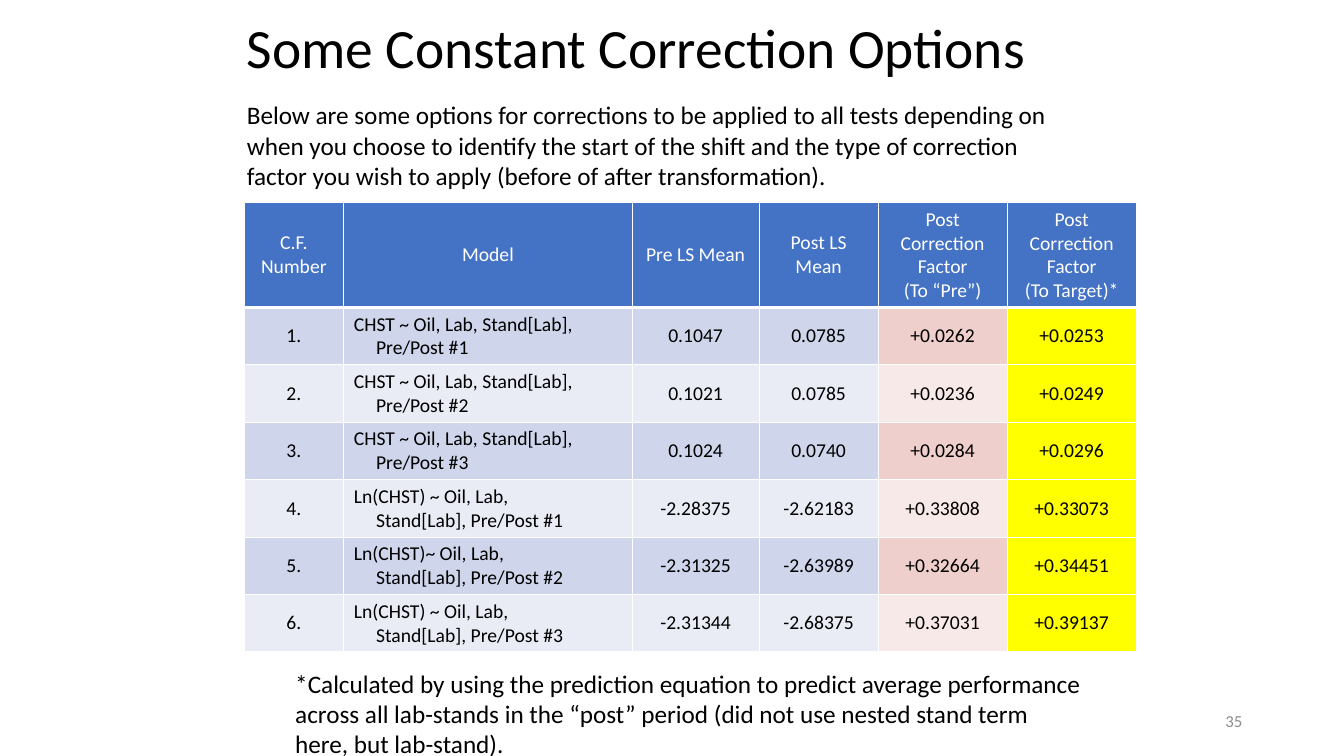
import lxml.etree
import pptx
import pptx.dml.color
import pptx.enum.text
import pptx.oxml.ns
import pptx.util

Inches = pptx.util.Inches
Align = pptx.enum.text.PP_ALIGN
Anchor = pptx.enum.text.MSO_ANCHOR

COLUMN_WIDTHS = [0.99, 2.86, 1.26, 1.18, 1.28, 1.28]
HEADER_HEIGHT = 1.04
ROW_HEIGHT = 0.57
MODEL_COLUMN = 1
WRAP_INDENT = 0.22

HEADERS = [
    "C.F. Number",
    "Model",
    "Pre LS Mean",
    "Post LS Mean",
    "Post Correction Factor\n(To “Pre”)",
    "Post Correction Factor\n(To Target)*",
]
CORRECTIONS = [
    ["1.", "CHST ~ Oil, Lab, Stand[Lab],\nPre/Post #1", "0.1047", "0.0785", "+0.0262", "+0.0253"],
    ["2.", "CHST ~ Oil, Lab, Stand[Lab],\nPre/Post #2", "0.1021", "0.0785", "+0.0236", "+0.0249"],
    ["3.", "CHST ~ Oil, Lab, Stand[Lab],\nPre/Post #3", "0.1024", "0.0740", "+0.0284", "+0.0296"],
    ["4.", "Ln(CHST) ~ Oil, Lab,\nStand[Lab], Pre/Post #1", "-2.28375", "-2.62183", "+0.33808", "+0.33073"],
    ["5.", "Ln(CHST)~ Oil, Lab,\nStand[Lab], Pre/Post #2", "-2.31325", "-2.63989", "+0.32664", "+0.34451"],
    ["6.", "Ln(CHST) ~ Oil, Lab,\nStand[Lab], Pre/Post #3", "-2.31344", "-2.68375", "+0.37031", "+0.39137"],
]
HEADER_FILLS = ["4472C4"] * 6
BAND_FILLS = [
    ["CFD5EA"] * 4 + ["EFCFCC", "FFFF00"],
    ["E9EBF5"] * 4 + ["F7E9E7", "FFFF00"],
]


def color(hex_string):
    return pptx.dml.color.RGBColor.from_string(hex_string)


def format_text(frame, size, hex_string, align):
    for para in frame.paragraphs:
        para.alignment = align
        for span in para.runs:
            span.font.name = "Calibri"
            span.font.size = pptx.util.Pt(size)
            span.font.bold = False
            span.font.color.rgb = color(hex_string)


def add_text(page, box, text, size, hex_string="000000", align=Align.LEFT, anchor=Anchor.TOP):
    frame = page.shapes.add_textbox(*map(Inches, box)).text_frame
    frame.word_wrap = True
    frame.vertical_anchor = anchor
    frame.text = text
    format_text(frame, size, hex_string, align)
    return frame


def add_title(page, box, text):
    frame = add_text(page, box, text, 39.6, anchor=Anchor.MIDDLE)
    frame.paragraphs[0].line_spacing = 0.9


def set_borders(cell, hex_string, bottom_width):
    properties = cell._tc.get_or_add_tcPr()
    for side, width in (("L", 1), ("R", 1), ("T", 1), ("B", bottom_width)):
        line = lxml.etree.SubElement(properties, pptx.oxml.ns.qn("a:ln" + side))
        line.set("w", str(pptx.util.Pt(width)))
        fill = lxml.etree.SubElement(line, pptx.oxml.ns.qn("a:solidFill"))
        lxml.etree.SubElement(fill, pptx.oxml.ns.qn("a:srgbClr")).set("val", hex_string)


def fill_row(table, row_index, texts, fills, hex_string, bottom_width):
    for column_index, (text, fill) in enumerate(zip(texts, fills)):
        cell = table.cell(row_index, column_index)
        set_borders(cell, "FFFFFF", bottom_width)
        cell.fill.solid()
        cell.fill.fore_color.rgb = color(fill)
        cell.vertical_anchor = Anchor.MIDDLE
        cell.text_frame.text = text
        is_model = row_index > 0 and column_index == MODEL_COLUMN
        format_text(cell.text_frame, 14, hex_string, Align.LEFT if is_model else Align.CENTER)
        if is_model:
            wrapped = cell.text_frame.paragraphs[1]
            wrapped._p.get_or_add_pPr().set("marL", str(Inches(WRAP_INDENT)))


def add_correction_table(page, left, top):
    heights = [HEADER_HEIGHT] + [ROW_HEIGHT] * len(CORRECTIONS)
    box = (left, top, sum(COLUMN_WIDTHS), sum(heights))
    table = page.shapes.add_table(len(heights), len(COLUMN_WIDTHS), *map(Inches, box)).table
    table.first_row = True
    table.horz_banding = False
    for column, width in zip(table.columns, COLUMN_WIDTHS):
        column.width = Inches(width)
    for row, height in zip(table.rows, heights):
        row.height = Inches(height)
    fill_row(table, 0, HEADERS, HEADER_FILLS, "FFFFFF", 3)
    for index, texts in enumerate(CORRECTIONS):
        fill_row(table, index + 1, texts, BAND_FILLS[index % 2], "000000", 1)


def build_options_page(deck):
    page = deck.slides.add_slide(deck.slide_layouts[6])
    add_title(page, (2.35, 0.09, 8.67, 0.83), "Some Constant Correction Options")
    add_text(page, (9.42, 6.95, 3, 0.4), "35", 12, "8C8C8C", Align.RIGHT, Anchor.MIDDLE)
    add_correction_table(page, 2.42, 2.01)
    add_text(
        page,
        (2.35, 0.94, 8.33, 1.01),
        "Below are some options for corrections to be applied to all tests depending on "
        "when you choose to identify the start of the shift and the type of correction "
        "factor you wish to apply (before of after transformation).",
        18,
    )
    add_text(
        page,
        (2.83, 6.58, 8, 1.01),
        "*Calculated by using the prediction equation to predict average performance "
        "across all lab-stands in the “post” period (did not use nested stand term "
        "here, but lab-stand).",
        18,
    )


def main():
    deck = pptx.Presentation()
    deck.slide_width = Inches(13.33)
    deck.slide_height = Inches(7.5)
    build_options_page(deck)
    deck.save("out.pptx")


if __name__ == "__main__":
    main()
